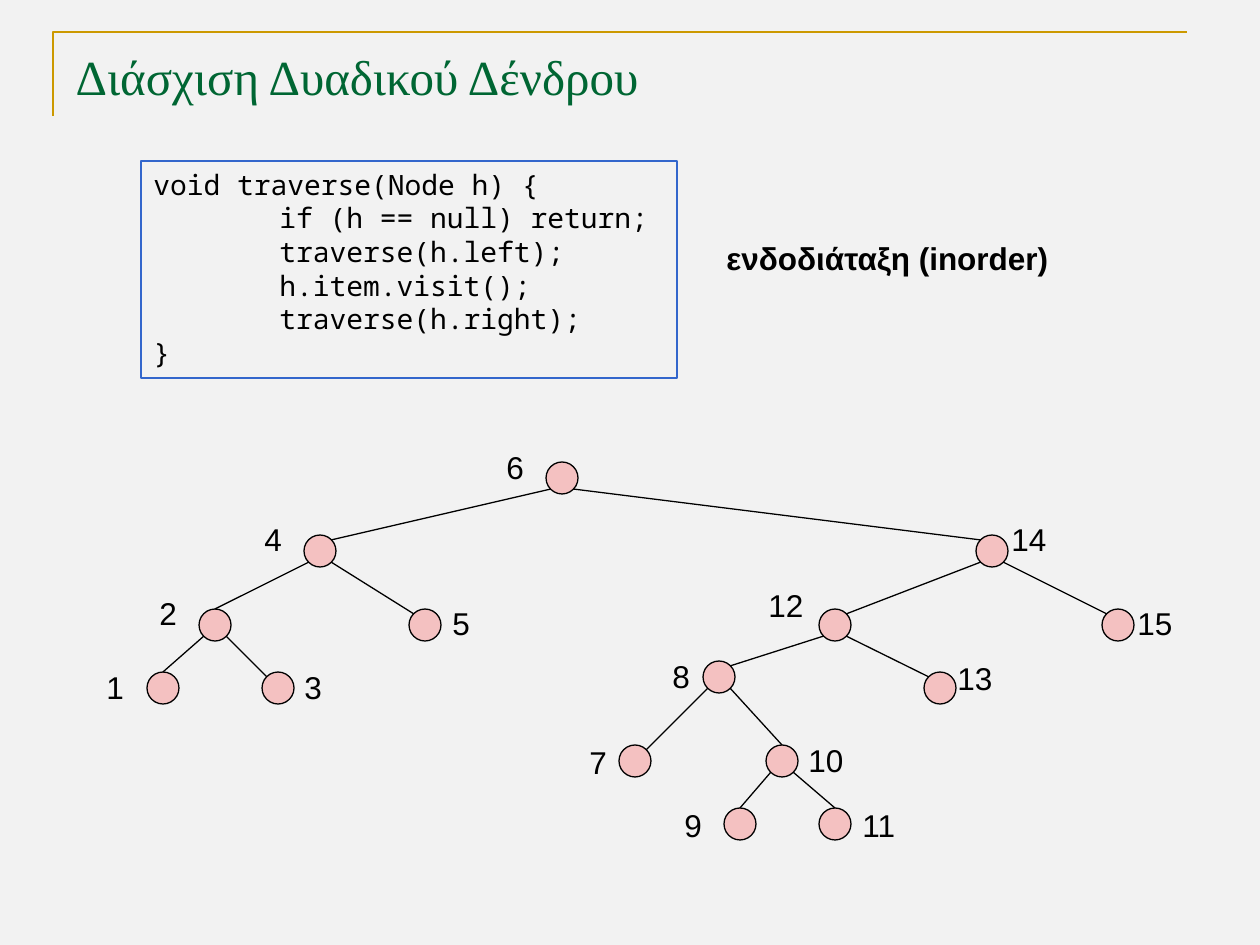
import pptx
import pptx.dml.color
import pptx.enum.shapes
import pptx.enum.text
import pptx.oxml
import pptx.oxml.ns
import pptx.util

PX_PER_INCH = 126
NODE_SIZE = 32
DIAGONAL = 11  # offset of a point at 45 degrees on the node's rim

CODE_LINES = [
    (0, "void traverse(Node h) {"),
    (1, "if (h == null) return;"),
    (1, "traverse(h.left);"),
    (1, "h.item.visit();"),
    (1, "traverse(h.right);"),
    (0, "}"),
]

# number: (node centre, top left of its label), inside the tree's box
NODES = {
    1: ((69, 246), (0, 220)),
    2: ((121, 183), (53, 146)),
    3: ((184, 246), (198, 220)),
    4: ((226, 109), (158, 72)),
    5: ((331, 183), (346, 156)),
    6: ((468, 36), (400, 0)),
    7: ((541, 319), (483, 295)),
    8: ((625, 235), (566, 209)),
    9: ((646, 382), (578, 358)),
    10: ((688, 319), (702, 293)),
    11: ((741, 382), (756, 358)),
    12: ((741, 183), (662, 138)),
    13: ((846, 246), (851, 211)),
    14: ((898, 109), (905, 72)),
    15: ((1024, 183), (1031, 156)),
}
CHILDREN = {6: (4, 14), 4: (2, 5), 2: (1, 3), 14: (12, 15), 12: (8, 13), 8: (7, 10), 10: (9, 11)}
JOINED_AT_TOP = {1, 2, 9, 10, 11}


def px(length):
    return pptx.util.Emu(round(length * 914400 / PX_PER_INCH))


def rgb(color):
    return pptx.dml.color.RGBColor.from_string(color)


def set_line(shape, color, width):
    shape.line.color.rgb = rgb(color)
    shape.line.width = pptx.util.Pt(width)


def set_font(para, name, size, color="000000", bold=False):
    para.font.name = name
    para.font.size = pptx.util.Pt(size)
    para.font.color.rgb = rgb(color)
    para.font.bold = bold


def add_label(page, text, left, top, width, height, bold=False):
    box = page.shapes.add_textbox(px(left), px(top), px(width), px(height))
    box.text_frame.word_wrap = False
    para = box.text_frame.paragraphs[0]
    para.text = text
    set_font(para, "Arial", 18, bold=bold)


def add_heading(page, left, top, width, height):
    """Place the title and the corner line around it."""
    builder = page.shapes.build_freeform(px(left), px(top + height))
    builder.add_line_segments([(px(left), px(top)), (px(left + width), px(top))], close=False)
    corner = builder.convert_to_shape()
    corner.fill.background()
    corner.shadow.inherit = False
    set_line(corner, "CC9900", 1.5)

    title = page.shapes.title
    title.left, title.top = px(left + 10), px(top + 6)
    title.width, title.height = px(width), px(67)
    frame = title.text_frame
    frame.vertical_anchor = pptx.enum.text.MSO_ANCHOR.BOTTOM
    frame.margin_bottom = 0
    para = frame.paragraphs[0]
    para.text = "Διάσχιση Δυαδικού Δένδρου"
    para.alignment = pptx.enum.text.PP_ALIGN.LEFT
    set_font(para, "Times New Roman", 28, "006633")


def add_code(page, left, top, width, height):
    box = page.shapes.add_shape(
        pptx.enum.shapes.MSO_SHAPE.RECTANGLE, px(left), px(top), px(width), px(height))
    box.shadow.inherit = False
    box.fill.background()
    set_line(box, "3366CC", 0.75)
    frame = box.text_frame
    frame.word_wrap = True
    frame.vertical_anchor = pptx.enum.text.MSO_ANCHOR.TOP
    for number, (level, text) in enumerate(CODE_LINES):
        para = frame.add_paragraph() if number else frame.paragraphs[0]
        para.text = text
        para.alignment = pptx.enum.text.PP_ALIGN.LEFT
        para.line_spacing = pptx.util.Pt(19.25)
        para._p.get_or_add_pPr().set("marL", str(px(level * PX_PER_INCH)))
        set_font(para, "Noto Sans Mono", 16)


def add_edge(page, parent, child, at_top):
    """Join the rims of two nodes, given their centres."""
    side = 1 if child[0] > parent[0] else -1
    if at_top:
        end = child[0], child[1] - NODE_SIZE / 2
    else:
        end = child[0] - side * DIAGONAL, child[1] - DIAGONAL
    edge = page.shapes.add_connector(
        pptx.enum.shapes.MSO_CONNECTOR.STRAIGHT,
        px(parent[0] + side * DIAGONAL), px(parent[1] + DIAGONAL), px(end[0]), px(end[1]))
    set_line(edge, "000000", 0.75)
    edge._element.spPr.append(pptx.oxml.parse_xml(
        "<a:effectLst %s/>" % pptx.oxml.ns.nsdecls("a")))


def add_node(page, center):
    node = page.shapes.add_shape(
        pptx.enum.shapes.MSO_SHAPE.OVAL,
        px(center[0] - NODE_SIZE / 2), px(center[1] - NODE_SIZE / 2),
        px(NODE_SIZE), px(NODE_SIZE))
    node.shadow.inherit = False
    node.fill.solid()
    node.fill.fore_color.rgb = rgb("FF0000")
    color = node._element.spPr.find(".//" + pptx.oxml.ns.qn("a:srgbClr"))
    color.append(pptx.oxml.parse_xml(
        '<a:alpha %s val="20000"/>' % pptx.oxml.ns.nsdecls("a")))
    set_line(node, "000000", 0.75)


def add_tree(page, left, top):
    centers = {number: (left + x, top + y) for number, ((x, y), _) in NODES.items()}
    for parent, children in CHILDREN.items():
        for child in children:
            add_edge(page, centers[parent], centers[child], child in JOINED_AT_TOP)
    for number, (_, (x, y)) in NODES.items():
        add_node(page, centers[number])
        add_label(page, str(number), left + x, top + y, 43 if number < 10 else 60, 50)


def main():
    deck = pptx.Presentation()
    deck.slide_width, deck.slide_height = px(1260), px(945)
    page = deck.slides.add_slide(deck.slide_layouts[5])
    page.background.fill.solid()
    page.background.fill.fore_color.rgb = rgb("F2F2F2")
    add_heading(page, 53, 32, 1134, 84)
    add_tree(page, 94, 442)
    add_label(page, "ενδοδιάταξη (inorder)", 714, 233, 348, 50, bold=True)
    add_code(page, 141, 161, 536, 217)
    deck.save("out.pptx")


if __name__ == "__main__":
    main()
